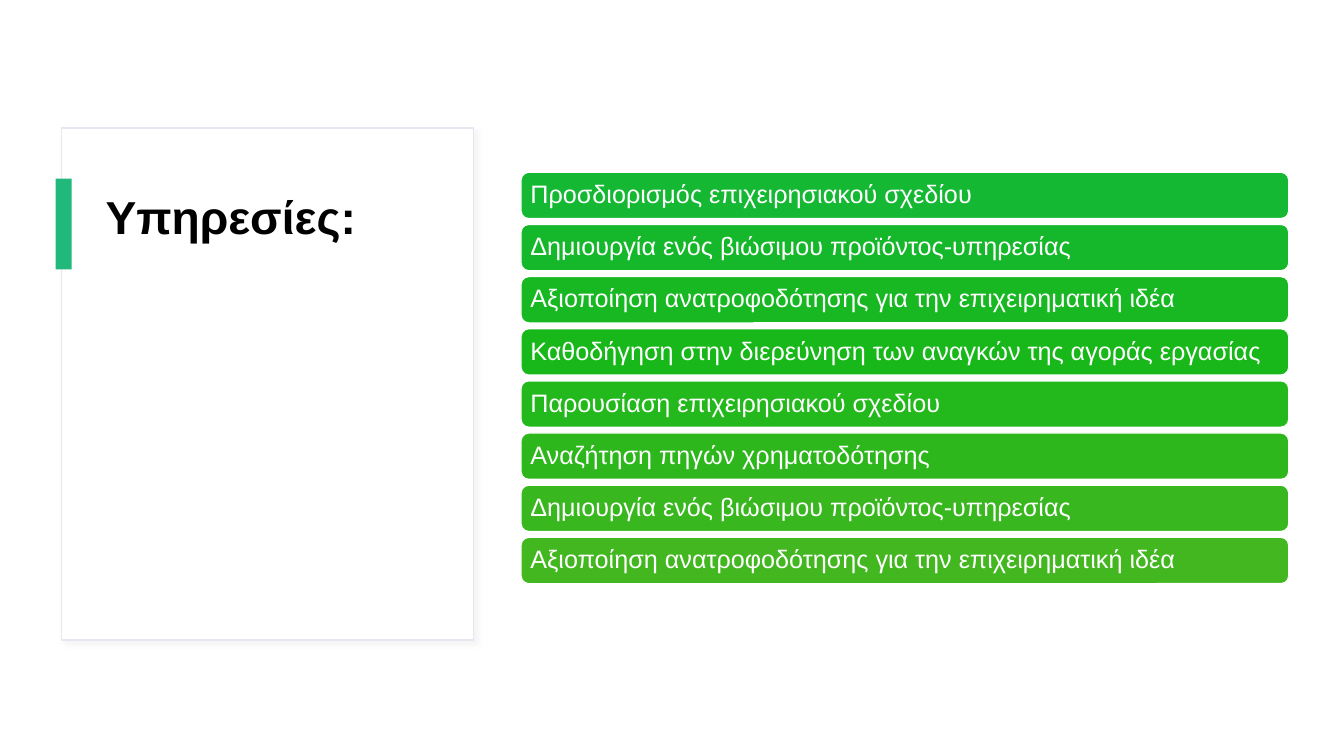
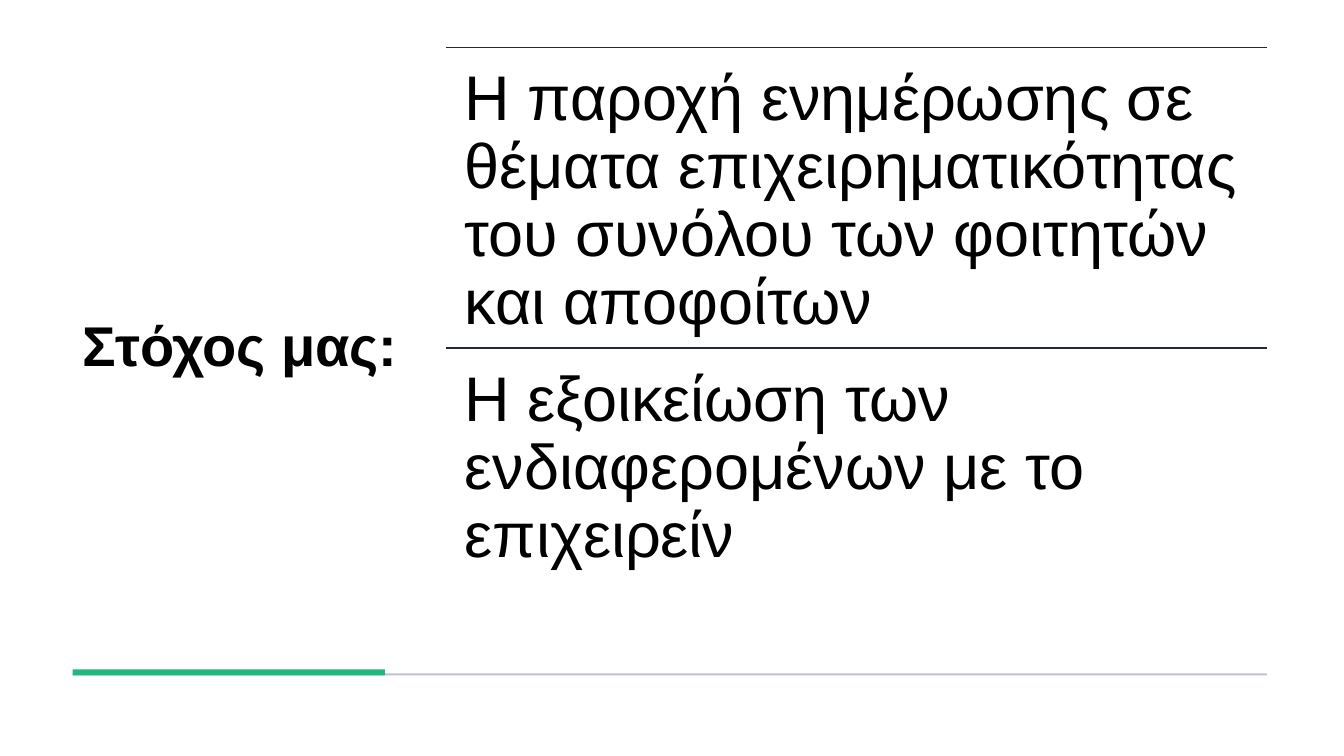
"""Build two slides on entrepreneurship support: the services and the goals."""
from lxml import etree
from pptx import Presentation
from pptx.dml.color import RGBColor
from pptx.enum.shapes import MSO_CONNECTOR, MSO_SHAPE
from pptx.enum.text import MSO_ANCHOR, PP_ALIGN
from pptx.oxml.ns import qn
from pptx.util import Cm, Pt

RECTANGLE, ROUNDED = MSO_SHAPE.RECTANGLE, MSO_SHAPE.ROUNDED_RECTANGLE
STRAIGHT = MSO_CONNECTOR.STRAIGHT
TOP, MIDDLE = MSO_ANCHOR.TOP, MSO_ANCHOR.MIDDLE
LEFT = PP_ALIGN.LEFT

FONT = "Arial"
BLACK = RGBColor(0x00, 0x00, 0x00)
WHITE = RGBColor(0xFF, 0xFF, 0xFF)
ACCENT = RGBColor(0x21, 0xB8, 0x7C)
CARD_BORDER = RGBColor(0xE5, 0xE6, 0xF0)
CARD_SHADOW = RGBColor(0xD9, 0xD9, 0xD9)
FOOTER_RULE = RGBColor(0xBD, 0xC0, 0xDB)
GOAL_RULE = RGBColor(0x24, 0x27, 0x41)

SERVICES_TITLE = "Υπηρεσίες:"
SERVICES = [
    ("Προσδιορισμός επιχειρησιακού σχεδίου", RGBColor(0x14, 0xB8, 0x33)),
    ("Δημιουργία ενός βιώσιμου προϊόντος-υπηρεσίας", RGBColor(0x16, 0xB8, 0x2B)),
    ("Αξιοποίηση ανατροφοδότησης για την επιχειρηματική ιδέα", RGBColor(0x17, 0xB8, 0x22)),
    ("Καθοδήγηση στην διερεύνηση των αναγκών της αγοράς εργασίας", RGBColor(0x19, 0xB8, 0x1A)),
    ("Παρουσίαση επιχειρησιακού σχεδίου", RGBColor(0x23, 0xB8, 0x1B)),
    ("Αναζήτηση πηγών χρηματοδότησης", RGBColor(0x2E, 0xB7, 0x1C)),
    ("Δημιουργία ενός βιώσιμου προϊόντος-υπηρεσίας", RGBColor(0x38, 0xB7, 0x1E)),
    ("Αξιοποίηση ανατροφοδότησης για την επιχειρηματική ιδέα", RGBColor(0x43, 0xB7, 0x20)),
]
GOALS_TITLE = "Στόχος μας:"
GOALS = [
    "Η παροχή ενημέρωσης σε θέματα επιχειρηματικότητας του συνόλου των φοιτητών και αποφοίτων",
    "Η εξοικείωση των ενδιαφερομένων με το επιχειρείν",
]


def add_box(slide, kind, left, top, width, height, fill, border=None):
    shape = slide.shapes.add_shape(kind, Cm(left), Cm(top), Cm(width), Cm(height))
    shape.shadow.inherit = False
    shape.fill.solid()
    shape.fill.fore_color.rgb = fill
    if border is None:
        shape.line.fill.background()
    else:
        shape.line.color.rgb = border
        shape.line.width = Pt(1)
    return shape


def write(shape, text, size, color, anchor, inset=(0.25, 0.13), bold=False):
    frame = shape.text_frame
    frame.word_wrap = True
    frame.vertical_anchor = anchor
    frame.margin_left = frame.margin_right = Cm(inset[0])
    frame.margin_top = frame.margin_bottom = Cm(inset[1])
    paragraph = frame.paragraphs[0]
    paragraph.alignment = LEFT
    paragraph.line_spacing = 0.9
    run = paragraph.add_run()
    run.text = text
    run.font.name = FONT
    run.font.size = Pt(size)
    run.font.bold = bold
    run.font.color.rgb = color


def add_text(slide, left, top, width, height, text, size, **style):
    box = slide.shapes.add_textbox(Cm(left), Cm(top), Cm(width), Cm(height))
    write(box, text, size, BLACK, **style)


def add_rule(slide, left, right, top):
    rule = slide.shapes.add_connector(STRAIGHT, Cm(left), Cm(top), Cm(right), Cm(top))
    rule.line.color.rgb = GOAL_RULE
    rule.line.width = Pt(1)
    etree.SubElement(rule.element.spPr, qn("a:effectLst"))


def add_soft_shadow(shape):
    effects = shape.element.spPr.find(qn("a:effectLst"))
    shadow = etree.SubElement(
        effects, qn("a:outerShdw"), blurRad=str(Pt(4)), dist=str(Pt(3)),
        dir=str(45 * 60000), algn="tl", rotWithShape="0")
    color = etree.SubElement(shadow, qn("a:srgbClr"), val=str(CARD_SHADOW))
    etree.SubElement(color, qn("a:alpha"), val="30000")


def build_services(slide):
    card = add_box(slide, RECTANGLE, 1.55, 3.23, 10.39, 12.9, WHITE, CARD_BORDER)
    add_soft_shadow(card)
    add_text(slide, 2.41, 4.78, 8.61, 9.78, SERVICES_TITLE, 33, anchor=TOP, bold=True)
    add_box(slide, RECTANGLE, 1.4, 4.5, 0.41, 2.29, ACCENT)
    first_top, last_top = 4.34, 13.54
    step = (last_top - first_top) / (len(SERVICES) - 1)
    for index, (service, fill) in enumerate(SERVICES):
        pill = add_box(slide, ROUNDED, 13.13, first_top + index * step, 19.35, 1.17, fill, WHITE)
        write(pill, service, 18, WHITE, MIDDLE, inset=(0.18, 0.18))


def build_goals(slide):
    top, height = 1.19, 15.16
    left, right = 11.23, 31.93
    margin = 1.83
    add_text(slide, margin, top, 9.07, height, GOALS_TITLE, 40, anchor=MIDDLE, bold=True)
    add_box(slide, RECTANGLE, margin, 16.97, right - margin, 0.05, FOOTER_RULE)
    add_box(slide, RECTANGLE, margin, 16.87, 7.87, 0.15, ACCENT)
    row_height = height / len(GOALS)
    for index, goal in enumerate(GOALS):
        row_top = top + index * row_height
        add_rule(slide, left, right, row_top)
        add_text(slide, left, row_top, right - left, row_height, goal, 45,
                 anchor=TOP, inset=(0.48, 0.48))


def main():
    presentation = Presentation()
    presentation.slide_width = Cm(33.87)
    presentation.slide_height = Cm(19.05)
    blank = presentation.slide_layouts[6]
    for build in (build_services, build_goals):
        build(presentation.slides.add_slide(blank))
    presentation.save("out.pptx")


if __name__ == "__main__":
    main()
